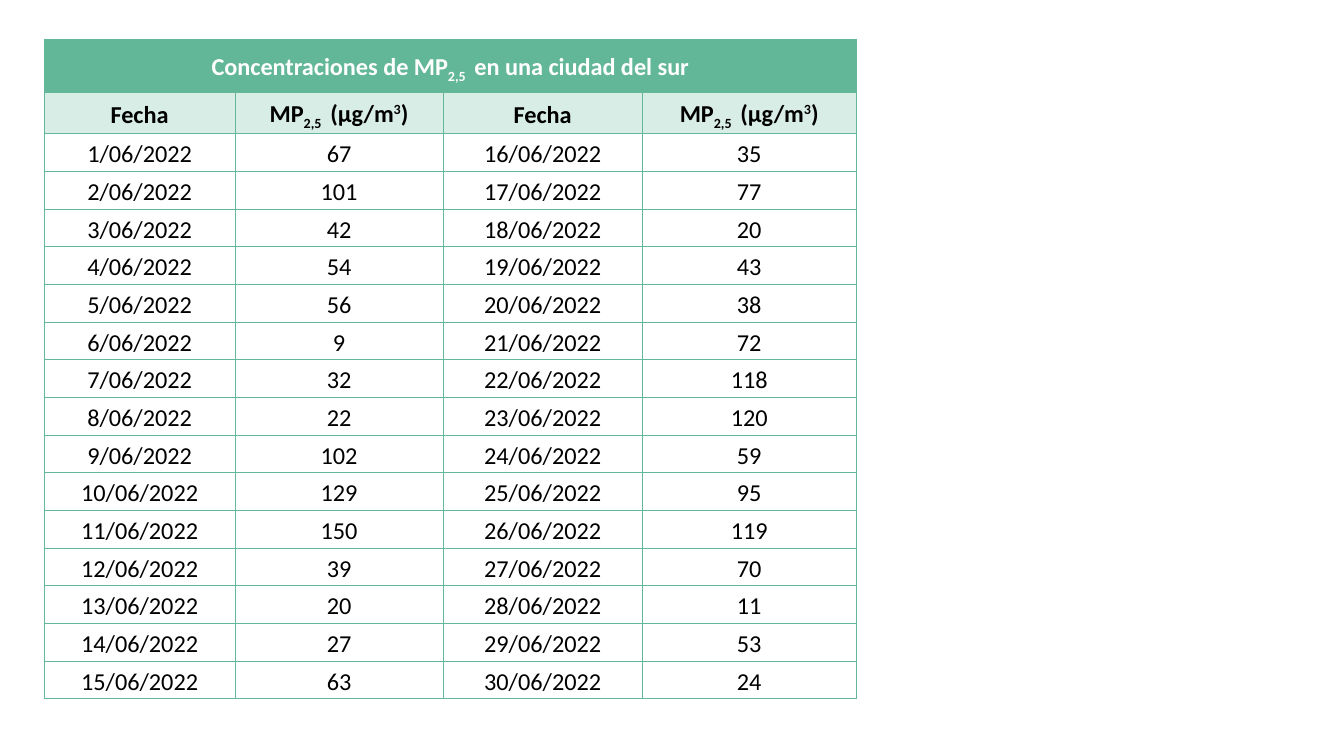
import pptx
import pptx.dml.color
import pptx.enum.text
import pptx.oxml
import pptx.oxml.ns
import pptx.util

Pt = pptx.util.Pt
RGBColor = pptx.dml.color.RGBColor

GREEN = RGBColor(0x63, 0xB7, 0x99)
BORDER_GREEN = RGBColor(0x64, 0xB8, 0x9A)
PALE_GREEN = RGBColor(0xD8, 0xED, 0xE6)
WHITE = RGBColor(0xFF, 0xFF, 0xFF)
BLACK = RGBColor(0, 0, 0)

COLUMN_WIDTHS = [102.3, 111.5, 106.6, 114.8]
TITLE_HEIGHT, HEADER_HEIGHT, DAY_HEIGHT = 28.4, 22, 20.2
SUBSCRIPT, SUPERSCRIPT = -25000, 30000

TITLE = [("Concentraciones de MP", 0), ("2,5 ", SUBSCRIPT), (" en una ciudad del sur", 0)]
DATE_HEADER = [("Fecha", 0)]
LEVEL_HEADER = [("MP", 0), ("2,5 ", SUBSCRIPT), (" (μg/m", 0), ("3", SUPERSCRIPT), (")", 0)]
LEVELS = [67, 101, 42, 54, 56, 9, 32, 22, 102, 129, 150, 39, 20, 27, 63,
          35, 77, 20, 43, 38, 72, 118, 120, 59, 95, 119, 70, 11, 53, 24]
HALF = len(LEVELS) // 2


def add_borders(cell):
    properties = cell._tc.get_or_add_tcPr()
    for side in ("lnL", "lnR", "lnT", "lnB"):
        properties.append(pptx.oxml.parse_xml(
            f'<a:{side} {pptx.oxml.ns.nsdecls("a")} w="{Pt(0.5)}"><a:solidFill>'
            f'<a:srgbClr val="{BORDER_GREEN}"/></a:solidFill></a:{side}>'))


def fill_cell(cell, pieces, color=BLACK, background=None, bold=False):
    """Write (text, baseline) pieces into a cell and format it."""
    add_borders(cell)
    if background is None:
        cell.fill.background()
    else:
        cell.fill.solid()
        cell.fill.fore_color.rgb = background
    cell.margin_left = cell.margin_right = Pt(2)
    cell.margin_top = cell.margin_bottom = 0
    cell.vertical_anchor = pptx.enum.text.MSO_ANCHOR.MIDDLE
    para = cell.text_frame.paragraphs[0]
    para.alignment = pptx.enum.text.PP_ALIGN.CENTER
    para.line_spacing = 1.15
    para.font.name = "Calibri"
    para.font.size = Pt(13)
    para.font.bold = bold
    para.font.color.rgb = color
    for text, baseline in pieces:
        span = para.add_run()
        span.text = text
        if baseline:
            span._r.get_or_add_rPr().set("baseline", str(baseline))


deck = pptx.Presentation()
deck.slide_width, deck.slide_height = Pt(720), Pt(405)
page = deck.slides.add_slide(deck.slide_layouts[6])

row_heights = [TITLE_HEIGHT, HEADER_HEIGHT] + [DAY_HEIGHT] * HALF
table = page.shapes.add_table(
    len(row_heights), len(COLUMN_WIDTHS), Pt(23.6), Pt(21.2),
    Pt(sum(COLUMN_WIDTHS)), Pt(sum(row_heights))).table
table.first_row = False
table.horz_banding = False
for column, width in zip(table.columns, COLUMN_WIDTHS):
    column.width = Pt(width)
for row, height in zip(table.rows, row_heights):
    row.height = Pt(height)

table.cell(0, 0).merge(table.cell(0, 3))
fill_cell(table.cell(0, 0), TITLE, WHITE, GREEN, bold=True)
for column in range(1, 4):
    add_borders(table.cell(0, column))

for column, header in enumerate([DATE_HEADER, LEVEL_HEADER] * 2):
    fill_cell(table.cell(1, column), header, background=PALE_GREEN, bold=True)

for index, level in enumerate(LEVELS):
    half, row = divmod(index, HALF)
    fill_cell(table.cell(row + 2, half * 2), [(f"{index + 1}/06/2022", 0)])
    fill_cell(table.cell(row + 2, half * 2 + 1), [(str(level), 0)])

deck.save("out.pptx")
